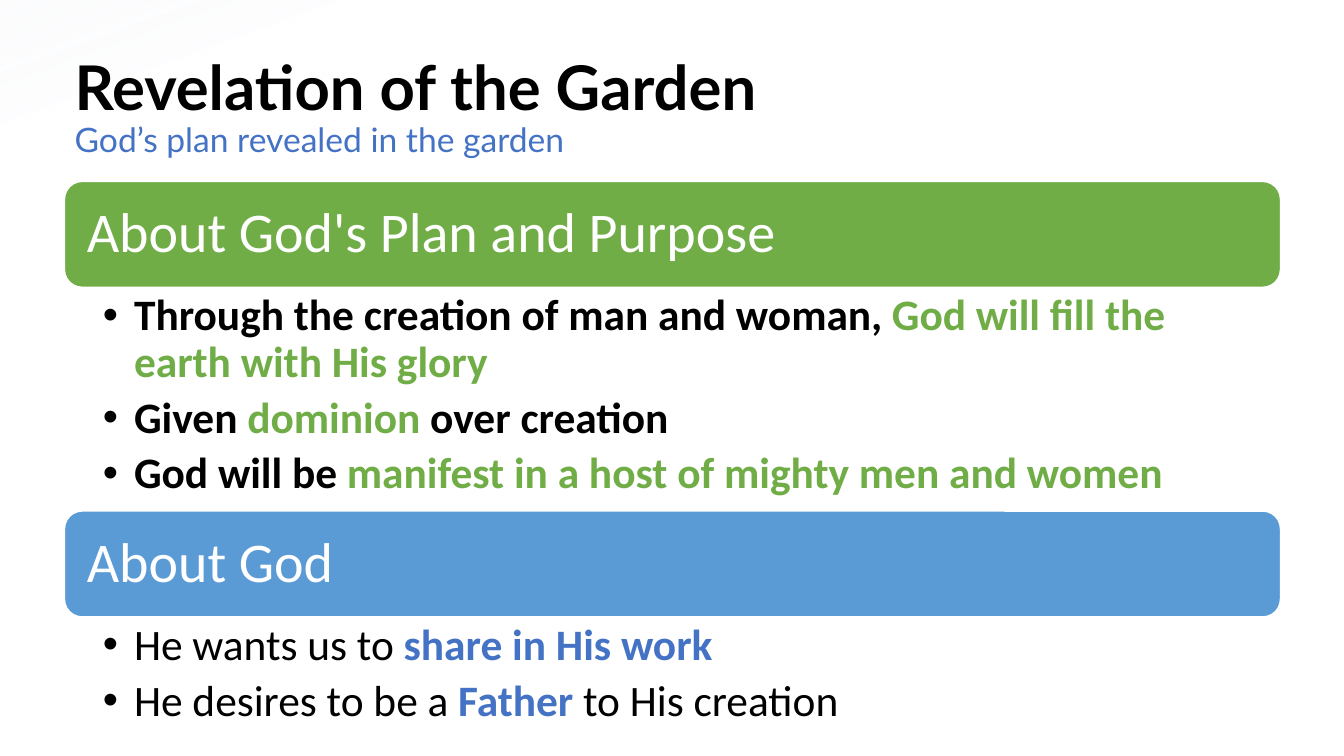
"""Build the "Revelation of the Garden" slide with two headed bullet sections."""
from lxml.etree import SubElement
from pptx import Presentation
from pptx.dml.color import RGBColor
from pptx.enum.shapes import MSO_SHAPE
from pptx.enum.text import MSO_ANCHOR, MSO_AUTO_SIZE, PP_ALIGN
from pptx.oxml import parse_xml
from pptx.oxml.ns import nsdecls, qn
from pptx.util import Inches, Pt

COLORS = {
    "black": "000000", "white": "FFFFFF", "green": "70AD47",
    "sky": "5B9BD5", "blue": "4472C4", "mist": "F6F8FC",
}
TITLE = "Revelation of the Garden"
SUBTITLE = "God’s plan revealed in the garden"
SECTIONS = [
    {
        "heading": "About God's Plan and Purpose",
        "fill": "green", "accent": "green", "bold": True, "height": 2.22,
        "bullets": [
            [("Through the creation of man and woman, ", False),
             ("God will fill the earth with His glory", True)],
            [("Given ", False), ("dominion", True), (" over creation", False)],
            [("God will be ", False),
             ("manifest in a host of mighty men and women", True)],
        ],
    },
    {
        "heading": "About God",
        "fill": "sky", "accent": "blue", "bold": False, "height": 1.18,
        "bullets": [
            [("He wants us to ", False), ("share in His work", True)],
            [("He desires to be a ", False), ("Father", True),
             (" to His creation", False)],
        ],
    },
]
GLOW_STOPS = [(0, "mist", 25), (34, "white", 70), (53, "white", 85), (67, "white", 100)]
GLOW_ANGLE = 70
LEFT, WIDTH = 0.64, 12.06
TITLE_TOP, SECTIONS_TOP = 0.35, 1.8
BAR_HEIGHT = 1.05


def color(name):
    return RGBColor.from_string(COLORS[name])


def add_span(para, text, size, ink="black", bold=False, font="Calibri"):
    span = para.add_run()
    span.text = text
    span.font.name = font
    span.font.size = Pt(size)
    span.font.bold = bold
    span.font.color.rgb = color(ink)


def set_frame(frame, anchor, left=0.1, top=0.05, right=0.1, bottom=0.05):
    frame.word_wrap = True
    frame.auto_size = MSO_AUTO_SIZE.NONE
    frame.vertical_anchor = anchor
    frame.margin_left, frame.margin_right = Inches(left), Inches(right)
    frame.margin_top, frame.margin_bottom = Inches(top), Inches(bottom)


def set_bullet(para, indent):
    properties = para._p.get_or_add_pPr()
    properties.set("marL", str(Inches(indent)))
    properties.set("indent", str(-Inches(indent)))
    SubElement(properties, qn("a:buFont")).set("typeface", "Arial")
    SubElement(properties, qn("a:buChar")).set("char", "•")


def add_title(page):
    title = page.shapes.title
    title.left, title.top = Inches(LEFT), Inches(TITLE_TOP)
    title.width, title.height = Inches(WIDTH), Inches(SECTIONS_TOP - TITLE_TOP)
    set_frame(title.text_frame, MSO_ANCHOR.MIDDLE)
    para = title.text_frame.paragraphs[0]
    para.alignment = PP_ALIGN.LEFT
    para.line_spacing = 0.9
    add_span(para, TITLE, 44, bold=True, font="Lato")
    para.add_line_break()
    add_span(para, SUBTITLE, 24, ink="blue", font="Lato")
    return title


def add_glow(page, title):
    glow = page.shapes.add_shape(MSO_SHAPE.RECTANGLE, 0, 0, Inches(4.2), Inches(2.37))
    glow.shadow.inherit = False
    glow.line.fill.background()
    stops = "".join(
        f'<a:gs pos="{place * 1000}"><a:srgbClr val="{COLORS[name]}">'
        f'<a:alpha val="{alpha * 1000}"/></a:srgbClr></a:gs>'
        for place, name, alpha in GLOW_STOPS
    )
    gradient = parse_xml(
        f'<a:gradFill {nsdecls("a")}><a:gsLst>{stops}</a:gsLst>'
        f'<a:lin ang="{GLOW_ANGLE * 60000}" scaled="0"/></a:gradFill>'
    )
    glow.element.spPr.find(qn("a:prstGeom")).addnext(gradient)
    title.element.addprevious(glow.element)


def add_heading(page, top, section):
    bar = page.shapes.add_shape(
        MSO_SHAPE.ROUNDED_RECTANGLE,
        Inches(LEFT), Inches(top), Inches(WIDTH), Inches(BAR_HEIGHT))
    bar.shadow.inherit = False
    bar.fill.solid()
    bar.fill.fore_color.rgb = color(section["fill"])
    bar.line.color.rgb = color("white")
    bar.line.width = Pt(1)
    set_frame(bar.text_frame, MSO_ANCHOR.MIDDLE, 0.17, 0.17, 0.17, 0.17)
    para = bar.text_frame.paragraphs[0]
    para.alignment = PP_ALIGN.LEFT
    para.line_spacing = 0.9
    add_span(para, section["heading"], 40, ink="white")


def add_bullets(page, top, section):
    box = page.shapes.add_textbox(
        Inches(LEFT), Inches(top), Inches(WIDTH), Inches(section["height"]))
    frame = box.text_frame
    set_frame(frame, MSO_ANCHOR.TOP, 0.38, 0.06, 0.31, 0.06)
    for index, bullet in enumerate(section["bullets"]):
        para = frame.add_paragraph() if index else frame.paragraphs[0]
        para.line_spacing = 0.9
        para.space_after = Pt(6.2)
        set_bullet(para, 0.31)
        for text, accented in bullet:
            add_span(para, text, 31, ink=section["accent"] if accented else "black",
                     bold=accented or section["bold"])


def main():
    deck = Presentation()
    deck.slide_width, deck.slide_height = Inches(13.33), Inches(7.5)
    page = deck.slides.add_slide(deck.slide_layouts[5])
    add_glow(page, add_title(page))
    top = SECTIONS_TOP
    for section in SECTIONS:
        add_heading(page, top, section)
        add_bullets(page, top + BAR_HEIGHT, section)
        top += BAR_HEIGHT + section["height"]
    deck.save("out.pptx")


if __name__ == "__main__":
    main()
